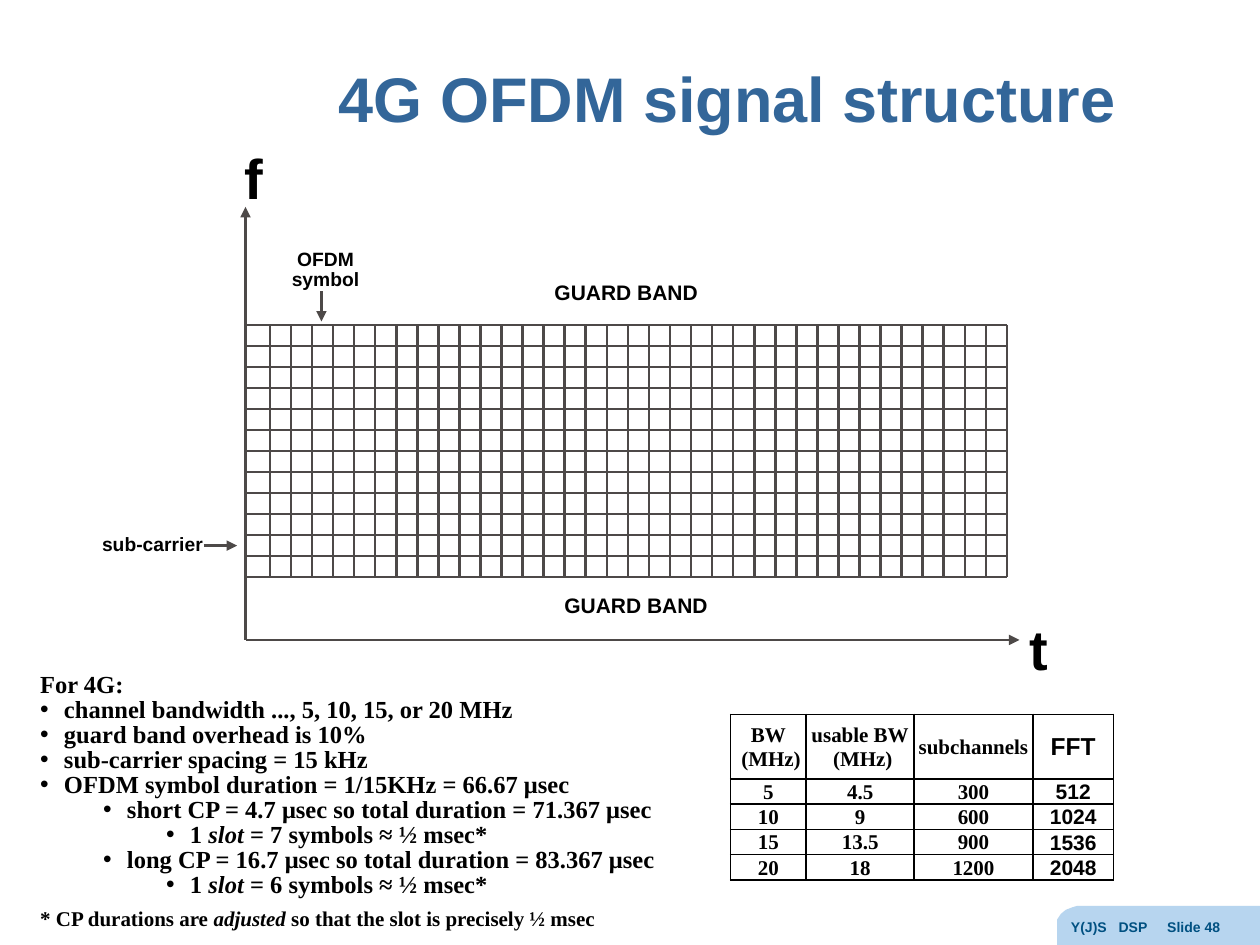
"""Build the 4G OFDM signal structure slide."""
from typing import NamedTuple

from lxml import etree
from pptx import Presentation
from pptx.dml.color import RGBColor
from pptx.enum.shapes import MSO_CONNECTOR
from pptx.enum.text import MSO_ANCHOR, MSO_AUTO_SIZE, PP_ALIGN
from pptx.oxml.ns import qn
from pptx.util import Cm, Pt

LEFT, CENTER = PP_ALIGN.LEFT, PP_ALIGN.CENTER
TOP, MIDDLE = MSO_ANCHOR.TOP, MSO_ANCHOR.MIDDLE
FIXED = MSO_AUTO_SIZE.NONE
STRAIGHT = MSO_CONNECTOR.STRAIGHT
SANS, SERIF = "Arial", "Times New Roman"
BLACK, GRAY, BLUE, PALE, NAVY = "000000", "4D4948", "336699", "B7D5EF", "005081"
ORIGIN_X, ORIGIN_Y = 4.95, 12.9
BAND_TOP, BAND_END, BAND_RIGHT = 6.55, 11.63, 20.3
FIRST_COL, COLS, ROWS = 5.44, 35, 12


class Label(NamedTuple):
    text: str
    x: float
    y: float
    width: float
    height: float
    size: float
    inset: float = 0.25


class Line(NamedTuple):
    x1: float
    y1: float
    x2: float
    y2: float
    arrow: bool = False


class Item(NamedTuple):
    text: str
    level: int = -1
    size: float = 14
    gap: float = 0


LABELS = [
    Label("f", 4.62, 3.1, 1, 0.91, 32, 0),
    Label("t", 20.45, 12.6, 1, 0.91, 32, 0),
    Label("GUARD BAND", 9.63, 5.59, 5.99, 0.69, 12),
    Label("GUARD BAND", 9.83, 11.89, 5.99, 0.69, 12),
    Label("sub-carrier", 1.78, 10.67, 2.59, 0.66, 11),
    Label("OFDM symbol", 5.08, 4.93, 2.97, 0.66, 11),
]
ARROWS = [
    Line(ORIGIN_X, ORIGIN_Y, 20.55, ORIGIN_Y, True),
    Line(ORIGIN_X, ORIGIN_Y, ORIGIN_X, 4.17, True),
    Line(4.11, 11, 4.78, 11, True),
    Line(6.48, 5.87, 6.48, 6.48, True),
]
ITEMS = [
    Item("For 4G:"),
    Item("channel bandwidth ..., 5, 10, 15, or 20 MHz", 0),
    Item("guard band overhead is 10%", 0),
    Item("sub-carrier spacing = 15 kHz", 0),
    Item("OFDM symbol duration = 1/15KHz = 66.67 μsec", 0),
    Item("short CP = 4.7 μsec so total duration = 71.367 μsec", 1),
    Item("1_ slot_ = 7 symbols ≈ ½ msec*", 2),
    Item("long CP = 16.7 μsec so total duration = 83.367 μsec", 1),
    Item("1_ slot_ = 6 symbols ≈ ½ msec*", 2),
    Item("* CP durations are _adjusted _so that the slot is precisely ½ msec", size=12, gap=6),
]
TABLE = [
    ["BW\n (MHz)", "usable BW\n (MHz)", "subchannels", "FFT"],
    ["5", "4.5", "300", "512"],
    ["10", "9", "600", "1024"],
    ["15", "13.5", "900", "1536"],
    ["20", "18", "1200", "2048"],
]
WIDTHS = [1.52, 2.18, 2.39, 1.63]
HEIGHTS = [1.3, 0.51, 0.51, 0.51, 0.51]
CORNER = [(25.4, 18.26), (25.4, 19.05), (21.31, 19.05), (21.31, 18.64), (21.31, 18.54),
          (21.39, 18.42), (21.49, 18.34), (21.62, 18.29), (21.72, 18.26)]


def paint(target, color: str) -> None:
    """Give a fill a solid colour."""
    target.solid()
    target.fore_color.rgb = RGBColor.from_string(color)


def place(shape, x: float, y: float, width: float, height: float) -> None:
    """Move and size a shape."""
    shape.left, shape.top, shape.width, shape.height = Cm(x), Cm(y), Cm(width), Cm(height)


def write(para, text: str, *, size: float, font: str = SANS, color: str = BLACK,
          align=CENTER, spacing: float = 0.85, gap: float = 0) -> None:
    """Fill a paragraph with bold text, with italics between underscores."""
    para.alignment, para.line_spacing = align, spacing
    para.space_before, para.space_after = Pt(gap), Pt(0)
    for index, part in enumerate(text.split("_")):
        run = para.add_run()
        run.text = part
        run.font.name, run.font.size, run.font.bold = font, Pt(size), True
        run.font.italic = index % 2 == 1
        paint(run.font.fill, color)


def setup(frame, inset: float = 0.25, anchor=TOP) -> None:
    """Set the wrapping, insets and anchor of a text frame."""
    frame.word_wrap, frame.auto_size = True, FIXED
    frame.vertical_anchor = anchor
    frame.margin_left = frame.margin_right = Cm(inset)
    frame.margin_top = frame.margin_bottom = Cm(inset / 2)


def draw_label(slide, label: Label, **style) -> None:
    """Add a one-paragraph text box."""
    box = slide.shapes.add_textbox(0, 0, 0, 0)
    place(box, *label[1:5])
    setup(box.text_frame, label.inset)
    write(box.text_frame.paragraphs[0], label.text, size=label.size, **style)
    return box


def draw_line(slide, line: Line) -> None:
    """Add a straight line, with an arrowhead if asked."""
    link = slide.shapes.add_connector(STRAIGHT, *map(Cm, line[:4]))
    link.line.width = Pt(1.5)
    paint(link.line.fill, GRAY)
    if line.arrow:
        etree.SubElement(link.line._get_or_add_ln(), qn("a:tailEnd"), type="triangle")
    etree.SubElement(link._element.spPr, qn("a:effectLst"))


def draw_grid(slide) -> None:
    """Draw the sub-carrier rows and the symbol columns."""
    high = (BAND_END - BAND_TOP) / ROWS
    wide = (BAND_RIGHT - FIRST_COL) / COLS
    for row in range(ROWS + 1):
        y = BAND_TOP + row * high
        draw_line(slide, Line(ORIGIN_X, y, BAND_RIGHT, y))
    for col in range(COLS + 1):
        x = FIRST_COL + col * wide
        draw_line(slide, Line(x, BAND_TOP, x, BAND_END))


def draw_list(body, items: list[Item]) -> None:
    """Fill the body with the nested list."""
    place(body, 0.56, 13.46, 13.16, 5.49)
    frame = body.text_frame
    setup(frame)
    for index, item in enumerate(items):
        para = frame.add_paragraph() if index else frame.paragraphs[0]
        para.level = max(item.level, 0)
        write(para, item.text, size=item.size, font=SERIF, align=LEFT, gap=item.gap)
        props = para._p.get_or_add_pPr()
        listed = item.level >= 0
        props.set("marL", str(Cm(0.48 + 1.27 * item.level) if listed else 0))
        props.set("indent", str(Cm(-0.48) if listed else 0))
        if listed:
            etree.SubElement(props, qn("a:buFont"), typeface=SANS)
            etree.SubElement(props, qn("a:buChar"), char="•")
        else:
            etree.SubElement(props, qn("a:buNone"))


def draw_cell(cell, text: str, size: float, font: str) -> None:
    """Fill one cell and give it thin black borders."""
    cell.margin_left = cell.margin_right = cell.margin_top = Cm(0.03)
    cell.margin_bottom = 0
    cell.vertical_anchor = MIDDLE
    for index, part in enumerate(text.split("\n")):
        para = cell.text_frame.add_paragraph() if index else cell.text_frame.paragraphs[0]
        write(para, part, size=size, font=font, spacing=1.0)
    props = cell._tc.get_or_add_tcPr()
    for side in ("lnL", "lnR", "lnT", "lnB"):
        edge = etree.SubElement(props, qn(f"a:{side}"), w=str(Pt(1)))
        fill = etree.SubElement(edge, qn("a:solidFill"))
        etree.SubElement(fill, qn("a:srgbClr"), val=BLACK)
    cell.fill.background()


def draw_table(slide) -> None:
    """Add the bandwidth table."""
    table = slide.shapes.add_table(len(HEIGHTS), len(WIDTHS), Cm(14.73), Cm(14.4),
                                   Cm(sum(WIDTHS)), Cm(sum(HEIGHTS))).table
    table.first_row = table.horz_banding = False
    for col, width in zip(table.columns, WIDTHS):
        col.width = Cm(width)
    for r, (row, height) in enumerate(zip(TABLE, HEIGHTS)):
        table.rows[r].height = Cm(height)
        for c, text in enumerate(row):
            size = 14 if text == "FFT" else 12
            draw_cell(table.cell(r, c), text, size, SANS if c == 3 else SERIF)


def draw_foot(slide) -> None:
    """Add the corner tab and its tabbed text."""
    pen = slide.shapes.build_freeform(Cm(CORNER[0][0]), Cm(CORNER[0][1]))
    pen.add_line_segments([(Cm(x), Cm(y)) for x, y in CORNER[1:]], close=True)
    shape = pen.convert_to_shape()
    shape.shadow.inherit = False
    paint(shape.fill, PALE)
    shape.line.fill.background()
    label = Label("Y(J)S\tDSP\tSlide 48", 21.34, 18.39, 4.06, 0.66, 8)
    box = draw_label(slide, label, color=NAVY, align=LEFT, spacing=1.0)
    props = box.text_frame.paragraphs[0]._p.get_or_add_pPr()
    stops = etree.SubElement(props, qn("a:tabLst"))
    for stop in (0.96, 1.94):
        etree.SubElement(stops, qn("a:tab"), pos=str(Cm(stop)), algn="l")


def main() -> None:
    """Build and save the slide."""
    deck = Presentation()
    deck.slide_width, deck.slide_height = Cm(25.4), Cm(19.05)
    slide = deck.slides.add_slide(deck.slide_layouts[1])
    title, body = slide.placeholders
    place(title, 5.38, 0.46, 18.57, 3.18)
    setup(title.text_frame, anchor=MIDDLE)
    write(title.text_frame.paragraphs[0], "4G OFDM signal structure",
          size=36, color=BLUE, spacing=0.9)
    draw_grid(slide)
    for arrow in ARROWS:
        draw_line(slide, arrow)
    for label in LABELS:
        draw_label(slide, label)
    draw_list(body, ITEMS)
    draw_table(slide)
    draw_foot(slide)
    deck.save("out.pptx")


if __name__ == "__main__":
    main()
